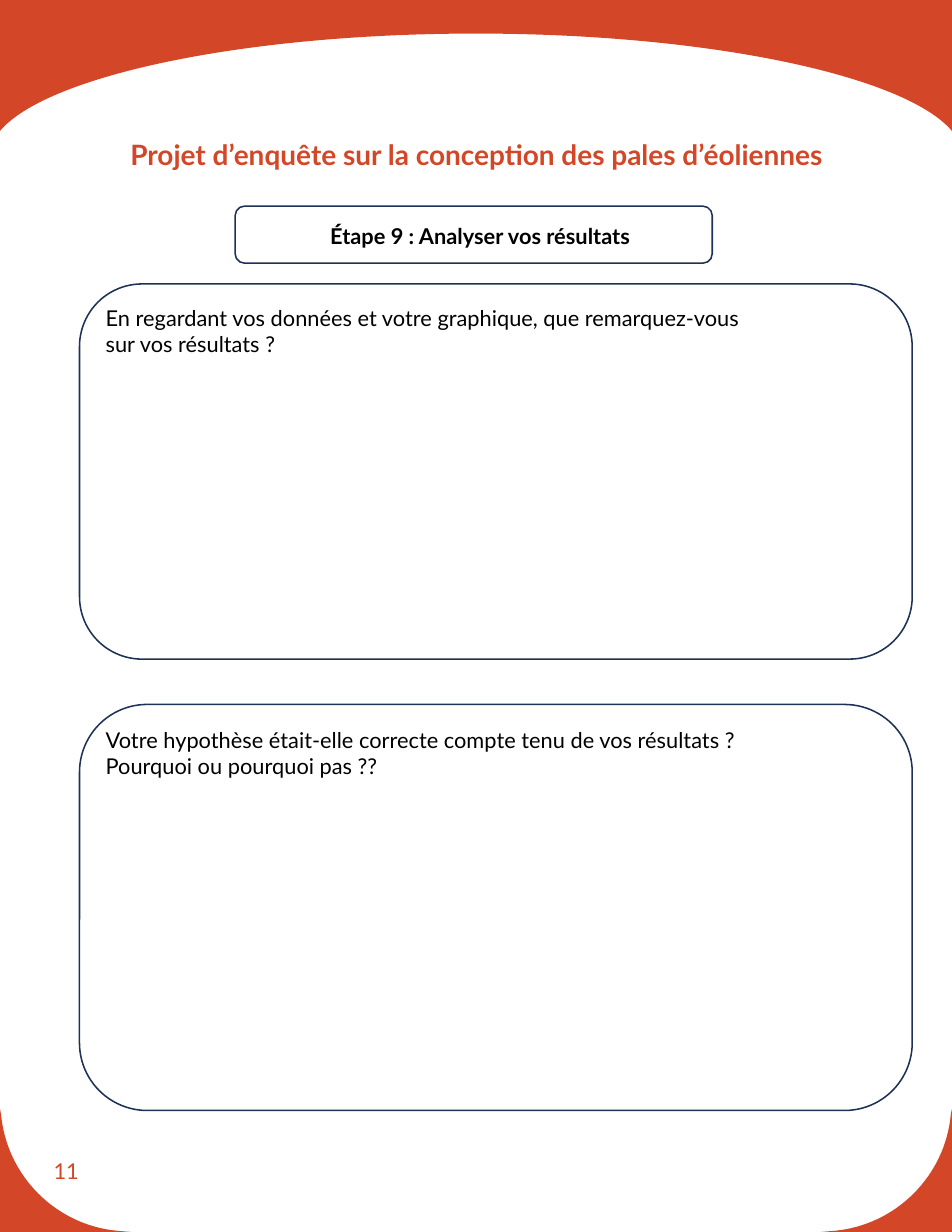
import pptx
import pptx.util
import pptx.dml.color
import pptx.enum.shapes
import pptx.enum.text
import pptx.oxml.ns
import lxml.etree

RED, NAVY, BLACK = "D34728", "1E3256", "000000"
Pt = pptx.util.Pt
qn = pptx.oxml.ns.qn
anchor = pptx.enum.text.MSO_ANCHOR
fit = pptx.enum.text.MSO_AUTO_SIZE


def tint(text):
    return pptx.dml.color.RGBColor.from_string(text)


def write(box, lines, size, color, bold=False):
    frame = box.text_frame
    for i, line in enumerate(lines):
        para = frame.add_paragraph() if i else frame.paragraphs[0]
        run = para.add_run()
        run.text = line
        run.font.name = "Lato"
        run.font.size = Pt(size)
        run.font.bold = bold
        run.font.color.rgb = tint(color)


# Page: a grid of 85 columns by 110 rows
deck = pptx.Presentation()
deck.slide_width = pptx.util.Inches(8.5)
deck.slide_height = pptx.util.Inches(11)
col, row = deck.slide_width // 85, deck.slide_height // 110
slide = deck.slides.add_slide(deck.slide_layouts[5])
shapes = slide.shapes

# Red arch and bottom corners: a start, three points for each curve, then corners
arch = [(85, 11.7), (80.9, 6.8), (63.4, 3), (42.5, 3), (21.6, 3), (4.1, 6.8),
        (0, 11.7), (0, 11.8), (0, 0), (85, 0), (85, 11.8)]
left = [(0.1, 99.5), (0.6, 105), (5, 109.4), (10.5, 109.9),
        (11.7, 110), (0, 110), (0, 99)]
right = [(85 - x, y) for x, y in left]
for dots, bends in ((arch, 2), (left, 1), (right, 1)):
    dots = [(x * col, y * row) for x, y in dots]
    pen = shapes.build_freeform(*dots[0])
    pen.add_line_segments(dots[1:], close=True)
    edge = pen.convert_to_shape()
    edge.shadow.inherit = False
    edge.fill.solid()
    edge.fill.fore_color.rgb = tint(RED)
    edge.line.fill.background()
    # Turn each leading run of three segments into one curve
    steps = list(edge.element.iter(qn("a:lnTo")))
    for n in range(0, 3 * bends, 3):
        curve = lxml.etree.Element(qn("a:cubicBezTo"))
        steps[n].addprevious(curve)
        for step in steps[n:n + 3]:
            curve.append(step[0])
            step.getparent().remove(step)

# Title
title = shapes.title
title.left, title.top = int(3.6 * col), int(10.9 * row)
title.width, title.height = int(77.9 * col), int(8.6 * row)
title.text_frame.auto_size = fit.NONE
title.text_frame.vertical_anchor = anchor.TOP
write(title, ["Projet d’enquête sur la conception des pales d’éoliennes"], 18, RED, True)
head = title.text_frame.paragraphs[0]
head.alignment = pptx.enum.text.PP_ALIGN.CENTER
head.line_spacing = 1.3

# Step label and answer frames: frame place, text place, lines, bold
panels = [
    ((21, 18.4, 42.6, 5.1), (28.5, 19.4, 41.3, 3.4),
     ["Étape 9 : Analyser vos résultats"], True),
    ((7.1, 25.35, 74.35, 33.5), (8.45, 26.7, 66.1, 5.7),
     ["En regardant vos données et votre graphique, que remarquez-vous",
      "sur vos résultats ?"], False),
    ((7.1, 62.9, 74.35, 36.25), (8.45, 64.4, 65.2, 5.7),
     ["Votre hypothèse était-elle correcte compte tenu de vos résultats ?",
      "Pourquoi ou pourquoi pas ??"], False),
]
for (x, y, w, h), (tx, ty, tw, th), lines, bold in panels:
    group = shapes.add_group_shape().shapes
    panel = group.add_shape(pptx.enum.shapes.MSO_SHAPE.ROUNDED_RECTANGLE,
                            int(x * col), int(y * row), int(w * col), int(h * row))
    panel.shadow.inherit = False
    panel.fill.background()
    panel.line.color.rgb = tint(NAVY)
    panel.line.width = Pt(1)
    box = group.add_textbox(int(tx * col), int(ty * row), int(tw * col), int(th * row))
    box.text_frame.word_wrap = bold
    box.text_frame.auto_size = fit.SHAPE_TO_FIT_TEXT
    write(box, lines, 14, BLACK, bold)

# Page number
page = shapes.add_textbox(int(3.8 * col), int(101.6 * row), int(19.1 * col), int(5.9 * row))
page.text_frame.word_wrap = True
page.text_frame.vertical_anchor = anchor.MIDDLE
write(page, ["11"], 14, RED)

deck.save("out.pptx")
